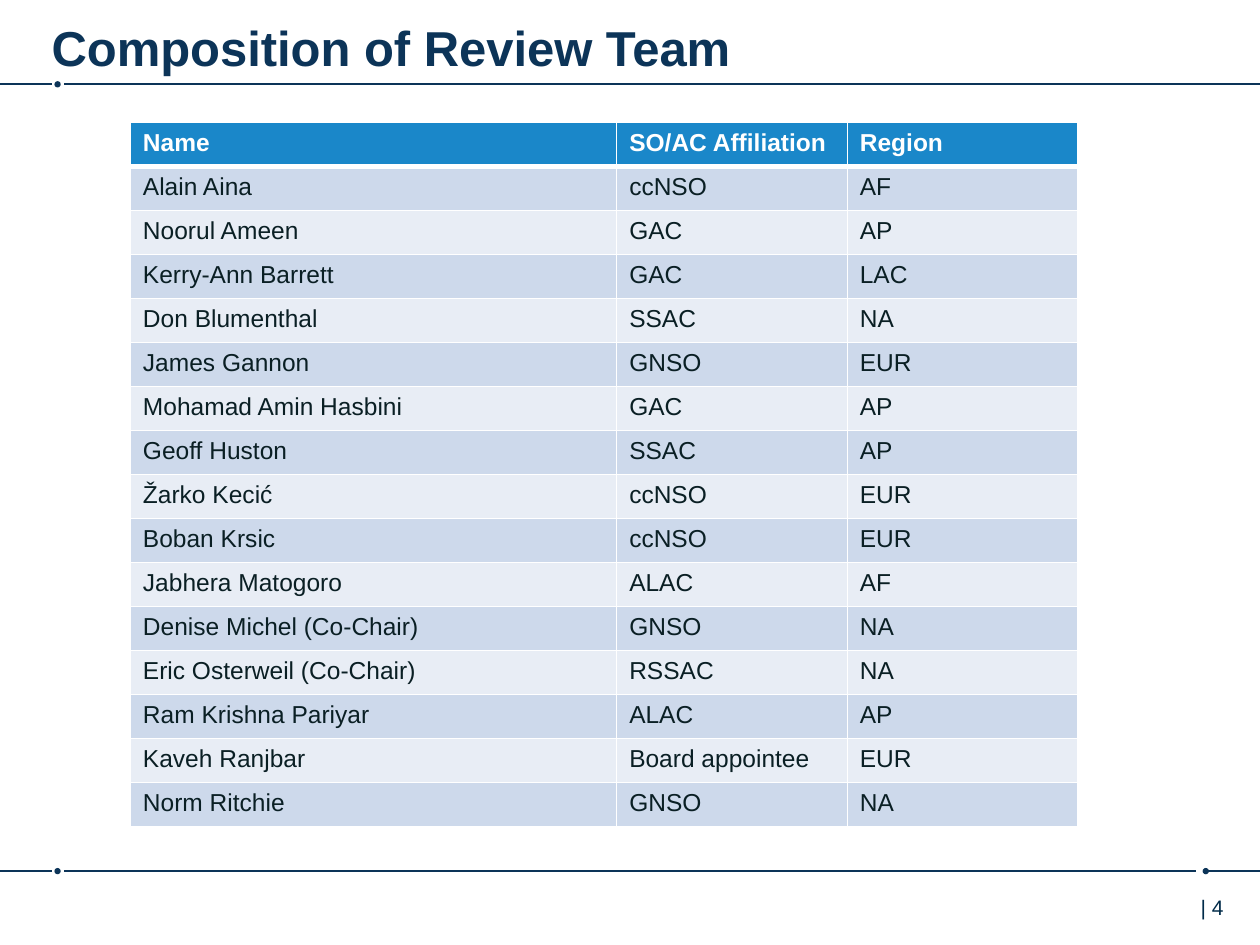
from lxml.etree import SubElement
from pptx import Presentation
from pptx.dml.color import RGBColor
from pptx.enum.shapes import MSO_CONNECTOR as Connector, MSO_SHAPE as Shape
from pptx.oxml.ns import qn
from pptx.util import Pt

NAVY = "0C3458"
MEMBERS = [
    ("Name", "SO/AC Affiliation", "Region"),
    ("Alain Aina", "ccNSO", "AF"),
    ("Noorul Ameen", "GAC", "AP"),
    ("Kerry-Ann Barrett", "GAC", "LAC"),
    ("Don Blumenthal", "SSAC", "NA"),
    ("James Gannon", "GNSO", "EUR"),
    ("Mohamad Amin Hasbini", "GAC", "AP"),
    ("Geoff Huston", "SSAC", "AP"),
    ("Žarko Kecić", "ccNSO", "EUR"),
    ("Boban Krsic", "ccNSO", "EUR"),
    ("Jabhera Matogoro", "ALAC", "AF"),
    ("Denise Michel (Co-Chair)", "GNSO", "NA"),
    ("Eric Osterweil (Co-Chair)", "RSSAC", "NA"),
    ("Ram Krishna Pariyar", "ALAC", "AP"),
    ("Kaveh Ranjbar", "Board appointee", "EUR"),
    ("Norm Ritchie", "GNSO", "NA"),
]


def color(value):
    return RGBColor.from_string(value)


def write(frame, text, size, ink, bold=False):
    para = frame.paragraphs[0]
    para.text = text
    font = para.font
    font.name, font.size, font.bold = "Arial", Pt(size), bold
    font.color.rgb = color(ink)


deck = Presentation()
deck.slide_width, deck.slide_height = Pt(720), Pt(540)
page = deck.slides.add_slide(deck.slide_layouts[6])

# Rules across the page, broken by dots
RULES = [
    (48.2, [31.1], [(29.5, 0), (720, 36.7)]),
    (497.8, [31.1, 687.2], [(29.5, 0), (683.3, 36.7), (690.5, 720)]),
]
DOT = 3.6
for y, dots, segments in RULES:
    for start, end in segments:
        rule = page.shapes.add_connector(Connector.STRAIGHT, Pt(start), Pt(y), Pt(end), Pt(y))
        rule.line.color.rgb = color(NAVY)
        rule.line.width = Pt(1)
        SubElement(rule._element.spPr, qn("a:effectLst"))
    for left in dots:
        dot = page.shapes.add_shape(Shape.OVAL, Pt(left), Pt(y - DOT / 2), Pt(DOT), Pt(DOT))
        dot.fill.solid()
        dot.fill.fore_color.rgb = color(NAVY)
        dot.line.fill.background()
        dot.shadow.inherit = False

# Title and page number: position, insets, text style
LABELS = [
    ((29.5, 3.6, 630.7, 35.3), (0, 6.5), ("Composition of Review Team", 28, NAVY, True)),
    ((668.9, 507.6, 62.6, 28.8), (17.2, 3.6), ("| 4", 12, "002B49")),
]
for place, (inset_left, inset_top), style in LABELS:
    box = page.shapes.add_textbox(*map(Pt, place))
    frame = box.text_frame
    frame.word_wrap = True
    frame.margin_left, frame.margin_top = Pt(inset_left), Pt(inset_top)
    frame.margin_right = 0
    write(frame, *style)

# Review team table
ROW_HEIGHT = 25.15
COLUMN_WIDTHS = [277.9, 131.8, 131.8]
table = page.shapes.add_table(
    len(MEMBERS), len(COLUMN_WIDTHS), Pt(74.5), Pt(70.1),
    Pt(sum(COLUMN_WIDTHS)), Pt(ROW_HEIGHT * len(MEMBERS)),
).table
for column, width in zip(table.columns, COLUMN_WIDTHS):
    column.width = Pt(width)

for r, member in enumerate(MEMBERS):
    table.rows[r].height = Pt(ROW_HEIGHT)
    header = r == 0
    band = "1A87C9" if header else ("E8EDF5", "CDD9EB")[r % 2]
    for c, text in enumerate(member):
        cell = table.cell(r, c)
        write(cell.text_frame, text, 14, "FFFFFF" if header else "0A1F24", header)
        properties = cell._tc.get_or_add_tcPr()
        for side in ("lnL", "lnR", "lnT", "lnB"):
            thick = (header and side == "lnB") or (r == 1 and side == "lnT")
            border = SubElement(properties, qn(f"a:{side}"), w=str(Pt(3 if thick else 1)))
            SubElement(SubElement(border, qn("a:solidFill")), qn("a:srgbClr"), val="FFFFFF")
        cell.fill.solid()
        cell.fill.fore_color.rgb = color(band)

deck.save("out.pptx")
